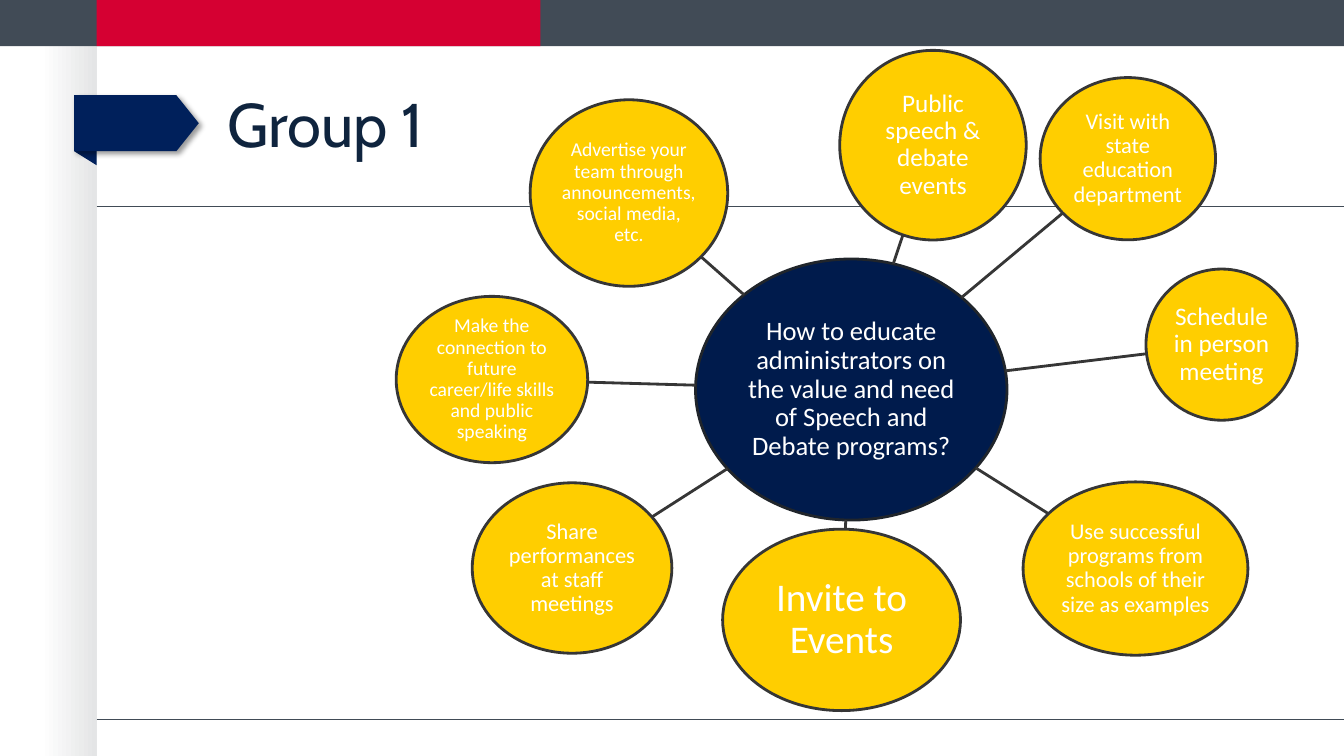
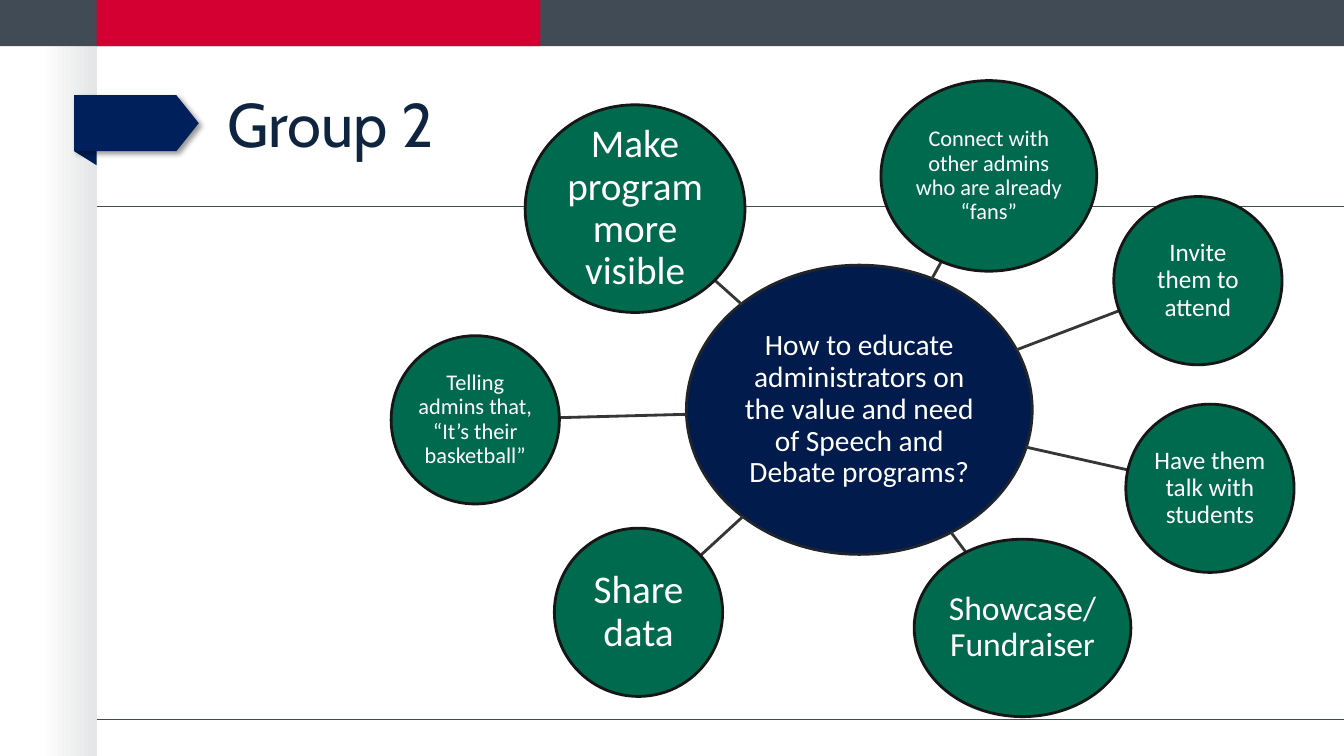
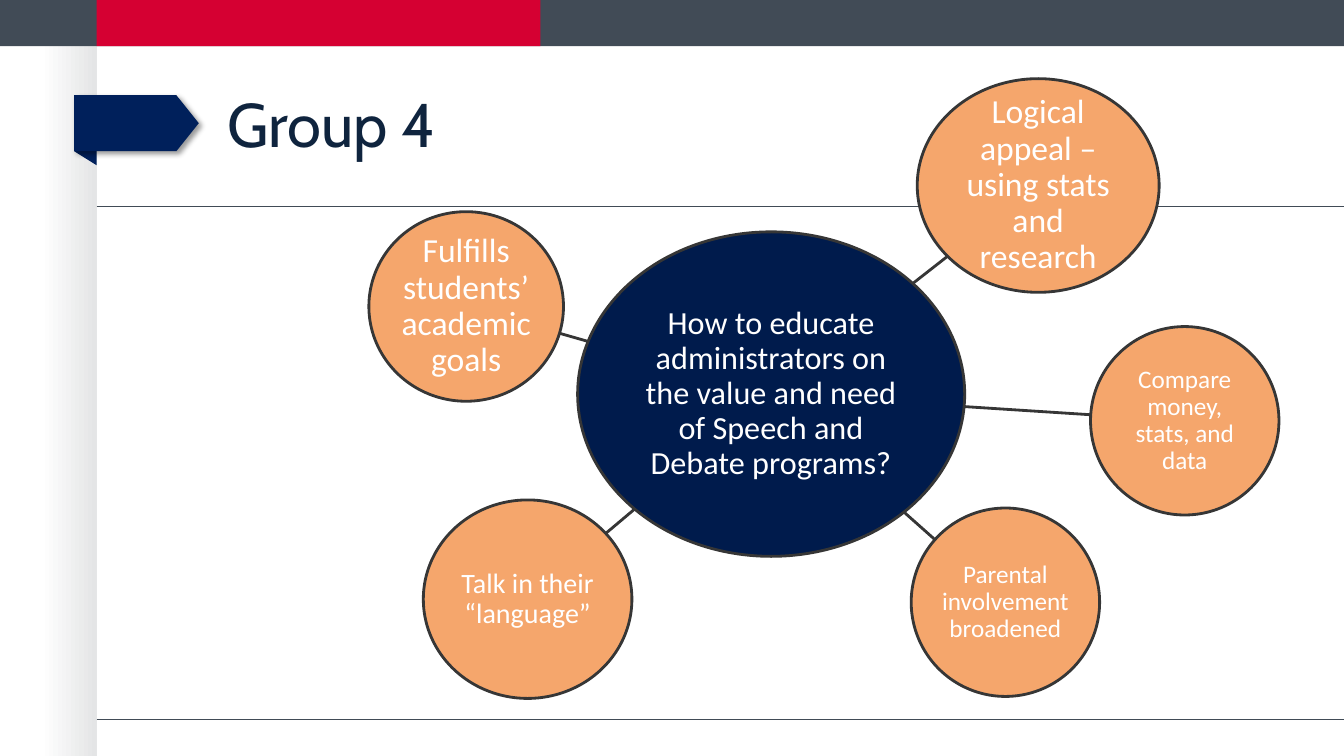
from collections import namedtuple
from math import hypot

from lxml import etree
from pptx import Presentation
from pptx.dml.color import RGBColor
from pptx.enum.shapes import MSO_CONNECTOR, MSO_SHAPE
from pptx.enum.text import MSO_ANCHOR, MSO_AUTO_SIZE, PP_ALIGN
from pptx.oxml import parse_xml
from pptx.oxml.ns import nsdecls, qn
from pptx.util import Pt

RECTANGLE, ELLIPSE = MSO_SHAPE.RECTANGLE, MSO_SHAPE.OVAL
STRAIGHT = MSO_CONNECTOR.STRAIGHT
TOP, MIDDLE = MSO_ANCHOR.TOP, MSO_ANCHOR.MIDDLE
LEFT, CENTER = PP_ALIGN.LEFT, PP_ALIGN.CENTER
NO_FIT = MSO_AUTO_SIZE.NONE

WIDTH, HEIGHT = 960, 540
MARGIN = 69
BAND_HEIGHT = 33
WHITE, SLATE, RED, NAVY = "FFFFFF", "414B56", "D50032", "00205B"
HUB_FILL, TITLE_COLOR, SHADE = "001B4C", "0F243E", "E4E5E6"
CHARCOAL, INK, BLACK = "363636", "20252B", "161616"
GOLD, GREEN, ORANGE = "FFCE00", "006A4E", "F5A66C"

QUESTION = ("How to educate administrators on the value and need "
            "of Speech and Debate programs?")

# Places are left, top, width, height in points.
Bubble = namedtuple("Bubble", "text size place")
Group = namedtuple("Group", "title fill outline hub_outline hub ideas")

GROUPS = [
    Group("Group 1", GOLD, CHARCOAL, INK,
          Bubble(QUESTION, 19, (496.8, 185, 222.5, 186.5)), [
              Bubble("Public speech & debate events", 18, (599.8, 36, 133.2, 135.4)),
              Bubble("Visit with state education department", 16,
                     (743, 55.4, 125.3, 115.9)),
              Bubble("Schedule in person meeting", 18, (818.6, 192.2, 108, 108)),
              Bubble("Use successful programs from schools of their size as examples",
                     16, (730.8, 344.2, 160.6, 123.8)),
              Bubble("Invite to Events", 28, (516.2, 378, 169.9, 129.6)),
              Bubble("Share performances at staff meetings", 16,
                     (337.3, 344.9, 142.6, 121.7)),
              Bubble("Make the connection to future career/life skills "
                     "and public speaking", 14, (283, 211.7, 136.8, 118.8)),
              Bubble("Advertise your team through announcements, social media, etc.",
                     14, (378.7, 71.3, 141.1, 133.2)),
          ]),
    Group("Group 2", GREEN, BLACK, INK,
          Bubble(QUESTION, 21, (490.3, 189.4, 247, 206.6)), [
              Bubble("Connect with other admins who are already “fans”", 16,
                     (629.3, 57.6, 154.1, 136.1)),
              Bubble("Invite them to attend", 18, (795.6, 140.4, 120.2, 120.2)),
              Bubble("Have them talk with students", 18, (804.2, 288.7, 120.2, 120.2)),
              Bubble("Showcase/Fundraiser", 24, (653, 385.2, 154.8, 126.7)),
              Bubble("Share data", 28, (396, 377.3, 120.2, 120.2)),
              Bubble("Telling admins that, “It’s their basketball”", 16,
                     (279.4, 239.8, 120.2, 120.2)),
              Bubble("Make program more visible", 28, (375.1, 74.9, 157, 148.3)),
          ]),
    Group("Group 4", ORANGE, CHARCOAL, CHARCOAL,
          Bubble(QUESTION, 23, (412.6, 165.6, 276.5, 231.8)), [
              Bubble("Logical appeal – using stats and research", 24,
                     (655.2, 56.2, 172.8, 152.6)),
              Bubble("Compare money, stats, and data", 18, (779, 233.3, 134.6, 134.6)),
              Bubble("Parental involvement broadened", 18,
                     (650.9, 362.9, 134.6, 134.6)),
              Bubble("Talk in their “language”", 20, (302.4, 357.1, 149, 141.8)),
              Bubble("Fulfills students’ academic goals", 24,
                     (263.5, 151.2, 139, 135.4)),
          ]),
]


def rgb(code):
    return RGBColor.from_string(code)


def set_values(target, values):
    for name, value in values.items():
        setattr(target, name, value)


def place_shape(shape, place):
    names = ("left", "top", "width", "height")
    set_values(shape, dict(zip(names, map(Pt, place))))


def paint(shape, fill, outline=None):
    shape.shadow.inherit = False
    shape.fill.solid()
    shape.fill.fore_color.rgb = rgb(fill)
    if outline:
        shape.line.color.rgb = rgb(outline)
        shape.line.width = Pt(2)
    else:
        shape.line.fill.background()


def write_text(shape, text, frame_values, para_values, font_values, color):
    frame = shape.text_frame
    frame.text = text
    set_values(frame, {"word_wrap": True, "auto_size": NO_FIT, **frame_values})
    para = frame.paragraphs[0]
    set_values(para, para_values)
    font = para.runs[0].font
    set_values(font, font_values)
    font.color.rgb = rgb(color)


def add_rectangle(page, place, fill):
    box = page.shapes.add_shape(RECTANGLE, *map(Pt, place))
    paint(box, fill)
    return box


def add_outline(page, points, fill):
    builder = page.shapes.build_freeform(*points[0], scale=Pt(1))
    builder.add_line_segments(points[1:], close=True)
    shape = builder.convert_to_shape()
    paint(shape, fill)
    return shape


def add_line(page, start, end, color, weight):
    line = page.shapes.add_connector(STRAIGHT, *map(Pt, (*start, *end)))
    line.line.color.rgb = rgb(color)
    line.line.width = Pt(weight)
    etree.SubElement(line.element.spPr, qn("a:effectLst"))


def add_soft_shadow(shape):
    effects = shape.element.spPr.find(qn("a:effectLst"))
    effects.append(parse_xml(
        f'<a:outerShdw {nsdecls("a")} blurRad="{Pt(4)}" dist="{Pt(3)}" dir="2700000">'
        '<a:srgbClr val="000000"><a:alpha val="40000"/></a:srgbClr></a:outerShdw>'))


def draw_frame(page):
    shade = add_rectangle(page, (29, BAND_HEIGHT, MARGIN - 29, HEIGHT - BAND_HEIGHT),
                          SHADE)
    shade.fill.gradient()
    shade.fill.gradient_angle = 0
    for stop, color in zip(shade.fill.gradient_stops, (WHITE, SHADE)):
        stop.color.rgb = rgb(color)
    add_rectangle(page, (0, 0, WIDTH, BAND_HEIGHT), SLATE)
    add_rectangle(page, (MARGIN, 0, 317, BAND_HEIGHT), RED)
    for y in (147.5, 514):
        add_line(page, (MARGIN, y), (WIDTH, y), SLATE, 1)
    add_outline(page, [(53, 108.5), (MARGIN, 108.5), (MARGIN, 118.5)], NAVY)
    ribbon = [(53, 67.5), (53, 108.5), (126, 108.5), (142, 87.5), (126, 67.5)]
    add_soft_shadow(add_outline(page, ribbon, NAVY))


def move_frame_to_layout(page, layout):
    """Make the shapes drawn on the page part of its layout."""
    for holder in list(layout.placeholders):
        if holder.placeholder_format.idx:
            layout.shapes.element.remove(holder.element)
    for shape in list(page.shapes):
        if not shape.is_placeholder:
            layout.shapes.element.append(shape.element)


def add_title(page, text):
    title = page.shapes.title
    place_shape(title, (155, 57.5, 186, 60.5))
    write_text(title, text, {"vertical_anchor": TOP}, {"alignment": LEFT},
               {"name": "Cabin", "size": Pt(44)}, TITLE_COLOR)


def add_bubble(page, bubble, fill, outline):
    oval = page.shapes.add_shape(ELLIPSE, *map(Pt, bubble.place))
    paint(oval, fill, outline)
    sides = ("left", "top", "right", "bottom")
    insets = {f"margin_{side}": Pt(1) for side in sides}
    write_text(oval, bubble.text, {"vertical_anchor": MIDDLE, **insets},
               {"alignment": CENTER, "line_spacing": 0.9},
               {"name": "Calibri", "size": Pt(bubble.size)}, WHITE)


def center(bubble):
    left, top, width, height = bubble.place
    return left + width / 2, top + height / 2


def rim_point(bubble, other):
    """Find where the line to the other bubble's centre leaves this ellipse."""
    (x, y), (other_x, other_y) = center(bubble), center(other)
    width, height = bubble.place[2:]
    dx, dy = other_x - x, other_y - y
    reach = 1 / hypot(2 * dx / width, 2 * dy / height)
    return x + dx * reach, y + dy * reach


def draw_group(page, group):
    add_title(page, group.title)
    add_bubble(page, group.hub, HUB_FILL, group.hub_outline)
    for idea in group.ideas:
        add_line(page, rim_point(group.hub, idea), rim_point(idea, group.hub),
                 CHARCOAL, 2)
        add_bubble(page, idea, group.fill, group.outline)


def main():
    deck = Presentation()
    deck.slide_width, deck.slide_height = Pt(WIDTH), Pt(HEIGHT)
    layout = deck.slide_layouts.get_by_name("Title Only")
    pages = [deck.slides.add_slide(layout) for _ in GROUPS]
    draw_frame(pages[0])
    move_frame_to_layout(pages[0], layout)
    for page, group in zip(pages, GROUPS):
        draw_group(page, group)
    deck.save("out.pptx")


if __name__ == "__main__":
    main()
